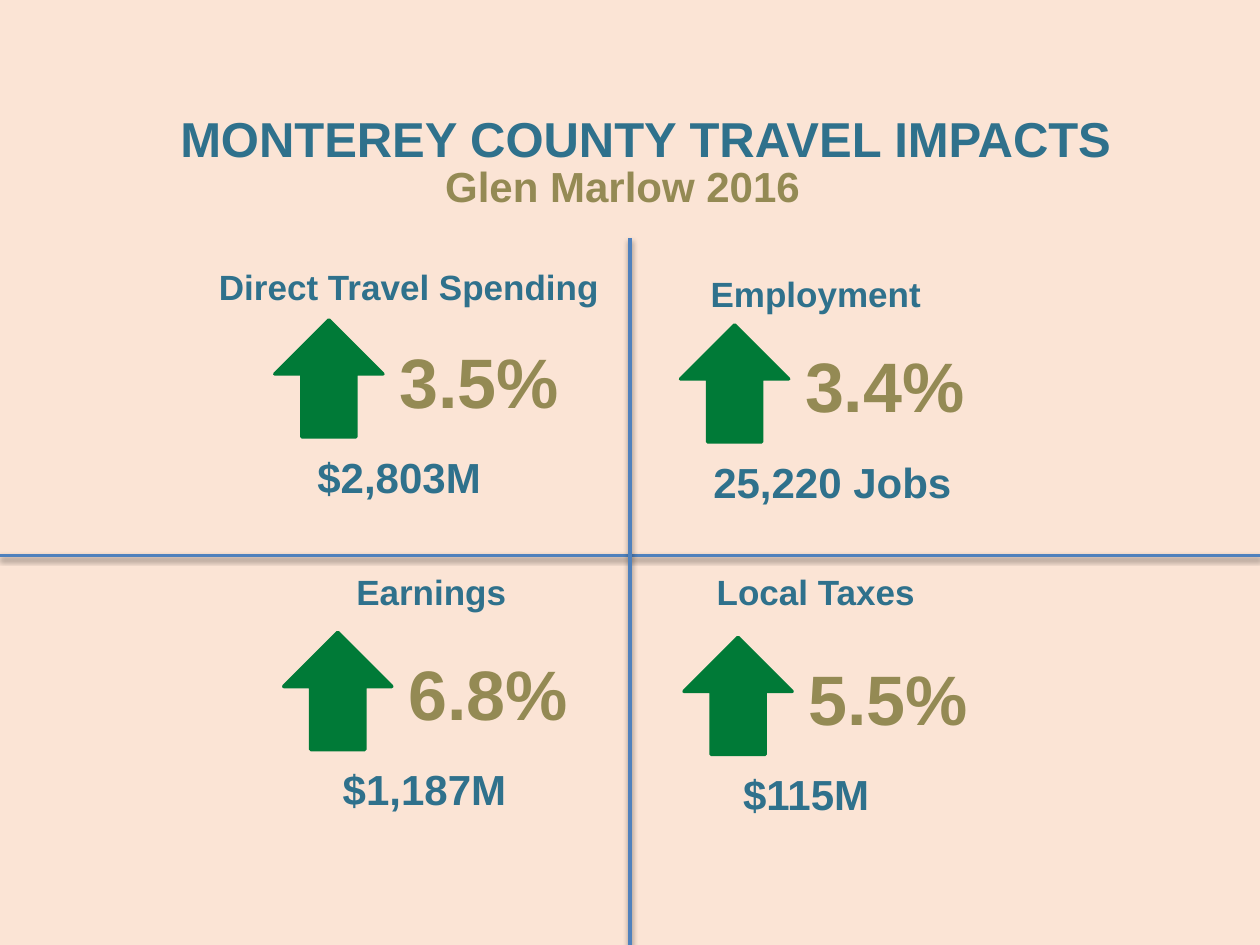
from lxml import etree
from pptx import Presentation
from pptx.dml.color import RGBColor
from pptx.enum.shapes import MSO_CONNECTOR, MSO_SHAPE
from pptx.enum.text import MSO_ANCHOR, MSO_AUTO_SIZE, PP_ALIGN
from pptx.oxml import parse_xml
from pptx.oxml.ns import nsdecls
from pptx.util import Cm, Pt

STRAIGHT = MSO_CONNECTOR.STRAIGHT
UP_ARROW = MSO_SHAPE.UP_ARROW
TOP, BOTTOM = MSO_ANCHOR.TOP, MSO_ANCHOR.BOTTOM
LEFT, CENTER = PP_ALIGN.LEFT, PP_ALIGN.CENTER
NO_FIT, GROW = MSO_AUTO_SIZE.NONE, MSO_AUTO_SIZE.SHAPE_TO_FIT_TEXT

FONT = "Arial"
PEACH, TEAL, OLIVE = "FBE4D5", "2F718C", "948A54"
GREEN, BLUE = "007A37", "4F81BD"
WIDTH, HEIGHT = 25.4, 19.05

# arrow position, heading, heading offset, change, amount, amount offset, amount width
QUADRANTS = [
    ((5.54, 6.45), "Direct Travel Spending", (-2.26, -1.22), "3.5%", "$2,803M", 0.61, 4.17),
    ((13.72, 6.55), "Employment", (-2.24, -1.19), "3.4%", "25,220 Jobs", 0.41, 5.64),
    ((5.72, 12.75), "Earnings", (-1.99, -1.37), "6.8%", "$1,187M", 0.94, 4.17),
    ((13.79, 12.85), "Local Taxes", (-2.31, -1.47), "5.5%", "$115M", 0.94, 4.17),
]


def rgb(color):
    return RGBColor.from_string(color)


def write(sp, text, size, color=TEAL, align=CENTER, anchor=TOP, fit=NO_FIT):
    tf = sp.text_frame
    tf.word_wrap = True
    tf.auto_size = fit
    tf.vertical_anchor = anchor
    p = tf.paragraphs[0]
    p.alignment = align
    r = p.add_run()
    r.text = text
    r.font.name = FONT
    r.font.size = Pt(size)
    r.font.bold = True
    r.font.color.rgb = rgb(color)


def add_text(s, text, x, y, w, h, **style):
    sp = s.shapes.add_textbox(Cm(x), Cm(y), Cm(w), Cm(h))
    write(sp, text, **style)


def add_header(s, x, y):
    title = s.shapes.title
    title.left, title.top, title.width, title.height = Cm(x), Cm(y), Cm(21.59), Cm(2.26)
    write(title, "MONTEREY COUNTY TRAVEL IMPACTS", size=28)
    add_text(s, "Glen Marlow 2016", x + 3.75, y + 0.53, 13.16, 1.78,
             size=24, color=OLIVE, anchor=BOTTOM)


def add_quadrant(s, x, y, heading, heading_offset, change, amount, amount_dx, amount_w):
    """Place a heading, arrow, change and amount around the arrow's corner."""
    dx, dy = heading_offset
    add_text(s, heading, x + dx, y + dy, 9.93, 6.5, size=20)
    arrow = s.shapes.add_shape(UP_ARROW, Cm(x), Cm(y), Cm(2.18), Cm(2.36))
    arrow.shadow.inherit = False
    arrow.fill.solid()
    arrow.fill.fore_color.rgb = rgb(GREEN)
    arrow.line.color.rgb = rgb(GREEN)
    arrow.line.width = Pt(2)
    add_text(s, change, x + 2.26, y + 0.24, 3.84, 1.96,
             size=40, color=OLIVE, align=LEFT, fit=GROW)
    add_text(s, amount, x + amount_dx, y + 2.52, amount_w, 1.27,
             size=24, align=LEFT, fit=GROW)


def add_divider(s, x1, y1, x2, y2):
    line = s.shapes.add_connector(STRAIGHT, Cm(x1), Cm(y1), Cm(x2), Cm(y2))
    line.line.color.rgb = rgb(BLUE)
    line.line.width = Pt(2)
    effects = parse_xml(f"<a:effectLst {nsdecls('a')}/>")
    shadow = etree.SubElement(
        effects, effects.tag.replace("effectLst", "outerShdw"),
        blurRad=str(Pt(3.1)), dist=str(Pt(1.6)), dir="5400000", rotWithShape="0")
    black = etree.SubElement(shadow, effects.tag.replace("effectLst", "srgbClr"), val="000000")
    etree.SubElement(black, effects.tag.replace("effectLst", "alpha"), val="38000")
    line._element.spPr.append(effects)


def main():
    prs = Presentation()
    prs.slide_width, prs.slide_height = Cm(WIDTH), Cm(HEIGHT)
    s = prs.slides.add_slide(prs.slide_layouts[5])
    s.background.fill.solid()
    s.background.fill.fore_color.rgb = rgb(PEACH)

    for (x, y), *content in QUADRANTS:
        add_quadrant(s, x, y, *content)
    add_divider(s, 0, 11.2, WIDTH, 11.2)
    add_divider(s, WIDTH / 2, 4.8, WIDTH / 2, HEIGHT)
    add_header(s, 2.22, 2.06)
    prs.save("out.pptx")


if __name__ == "__main__":
    main()
